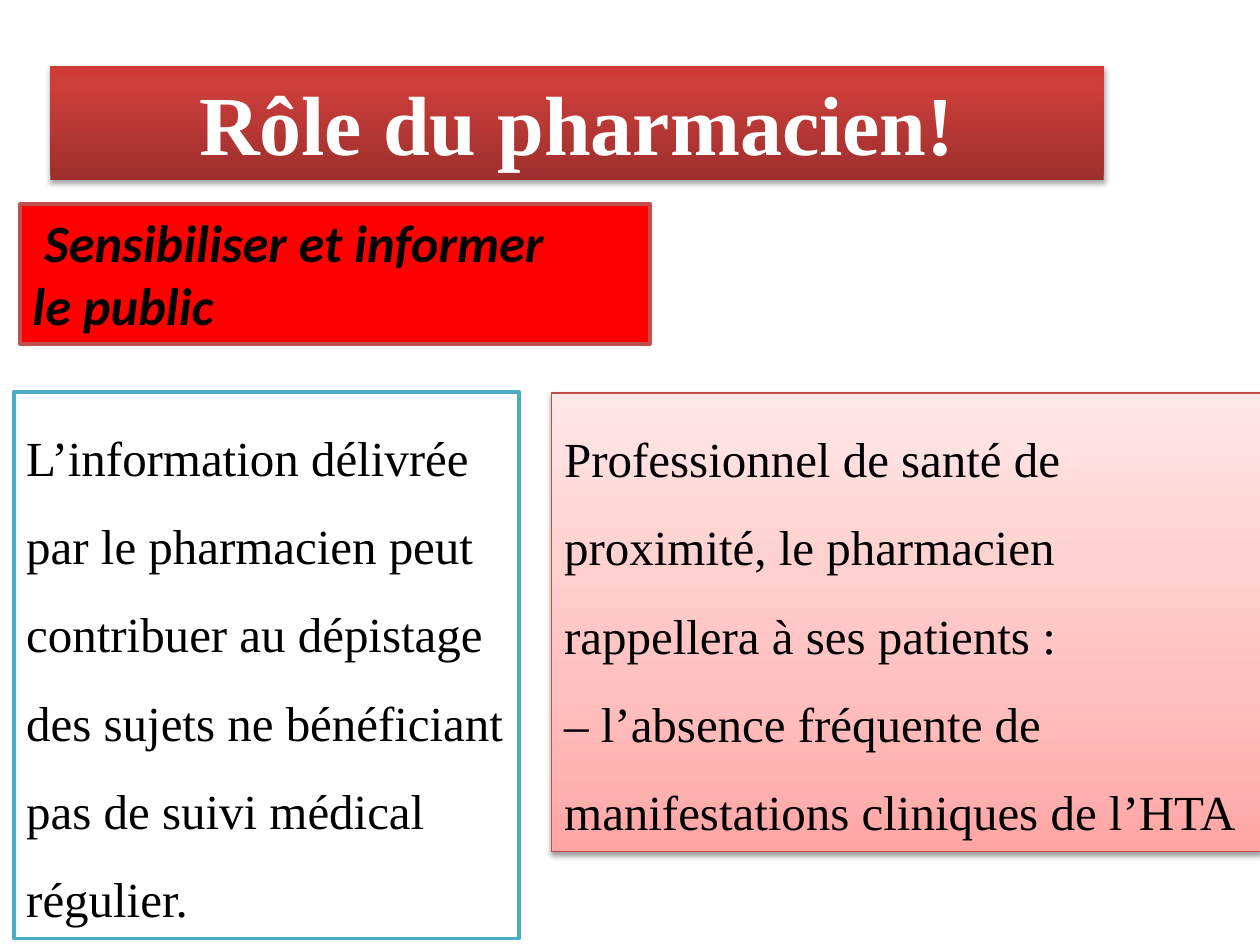
from lxml import etree
from pptx import Presentation
from pptx.dml.color import RGBColor
from pptx.enum.shapes import MSO_SHAPE
from pptx.enum.text import MSO_ANCHOR, MSO_AUTO_SIZE, PP_ALIGN
from pptx.oxml.ns import qn
from pptx.util import Inches, Pt

RECTANGLE = MSO_SHAPE.RECTANGLE
TOP = MSO_ANCHOR.TOP
GROW = MSO_AUTO_SIZE.SHAPE_TO_FIT_TEXT
LEFT, CENTER = PP_ALIGN.LEFT, PP_ALIGN.CENTER
SERIF, SANS = "Times New Roman", "Calibri"
COLORS = {
    "white": "FFFFFF",
    "black": "000000",
    "red": "FF0000",
    "brick": "C0504D",
    "rose": "BF4C48",
    "teal": "4BACC6",
}
TITLE_STOPS = [(0, "9C2F2D"), (80, "CB3E3A"), (100, "CE3B37")]
ADVICE_STOPS = [(0, "FFA6A5"), (35, "FFC0BF"), (100, "FFE7E7")]


def rgb(name):
    return RGBColor.from_string(COLORS[name])


def add_panel(slide, box, fill=None, line=None, width=0):
    panel = slide.shapes.add_shape(RECTANGLE, *(Inches(length) for length in box))
    panel.shadow.inherit = False
    if fill:
        panel.fill.solid()
        panel.fill.fore_color.rgb = rgb(fill)
    if line:
        panel.line.color.rgb = rgb(line)
        panel.line.width = Pt(width)
    else:
        panel.line.fill.background()
    frame = panel.text_frame
    frame.word_wrap = True
    frame.auto_size = GROW
    frame.vertical_anchor = TOP
    return panel


def add_color(parent, value):
    return etree.SubElement(parent, qn("a:srgbClr"), val=value)


def shade(panel, stops):
    panel.fill.gradient()
    panel.fill.gradient_angle = 90
    stop_list = panel.element.spPr.find(".//" + qn("a:gsLst"))
    for old in list(stop_list):
        stop_list.remove(old)
    for position, value in stops:
        stop = etree.SubElement(stop_list, qn("a:gs"), pos=str(position * 1000))
        add_color(stop, value)


def cast_shadow(panel, opacity, distance):
    effects = panel.element.spPr.find(qn("a:effectLst"))
    shadow = etree.SubElement(
        effects, qn("a:outerShdw"), blurRad=str(Pt(3.1)), dist=str(Pt(distance)),
        dir="5400000", rotWithShape="0")
    color = add_color(shadow, COLORS["black"])
    etree.SubElement(color, qn("a:alpha"), val=str(opacity * 1000))


def write(panel, paragraphs, font, size, color="black", bold=None, italic=None,
          align=LEFT, spacing=None):
    frame = panel.text_frame
    for index, runs in enumerate(paragraphs):
        paragraph = frame.add_paragraph() if index else frame.paragraphs[0]
        paragraph.alignment = align
        if spacing:
            paragraph.line_spacing = spacing
        for text in runs:
            run = paragraph.add_run()
            run.text = text
            run.font.name = font
            run.font.size = Pt(size)
            run.font.color.rgb = rgb(color)
            run.font.bold = bold
            run.font.italic = italic


def add_title(slide, box):
    title = add_panel(slide, box)
    shade(title, TITLE_STOPS)
    cast_shadow(title, 35, 1.8)
    write(title, [["Rôle du pharmacien!"]], SERIF, 48, "white", bold=True, align=CENTER)


def add_mission(slide, box):
    mission = add_panel(slide, box, "red", "brick", 2)
    write(mission, [[" ", "Sensibiliser et informer"], ["le public"]],
          SANS, 30, bold=True, italic=True)


def add_information(slide, box):
    information = add_panel(slide, box, "white", "teal", 2)
    write(information, [[
        "L’information délivrée par le pharmacien peut contribuer au dépistage "
        "des sujets ne bénéficiant pas de suivi médical régulier."
    ]], SERIF, 28, spacing=1.5)


def add_advice(slide, box):
    advice = add_panel(slide, box, line="rose", width=0.75)
    shade(advice, ADVICE_STOPS)
    cast_shadow(advice, 38, 1.6)
    write(advice, [
        ["Professionnel de santé de"],
        ["proximité, le pharmacien rappellera à ses patients :"],
        ["– l’absence fréquente de manifestations cliniques de l’HTA"],
    ], SERIF, 28, spacing=1.5)


def main():
    deck = Presentation()
    deck.slide_width, deck.slide_height = Inches(10), Inches(7.5)
    slide = deck.slides.add_slide(deck.slide_layouts[6])
    add_title(slide, (0.4, 0.52, 8.36, 0.91))
    add_mission(slide, (0.16, 1.62, 5, 1.11))
    add_information(slide, (0.11, 3.11, 4.01, 4.34))
    add_advice(slide, (4.38, 3.12, 5.63, 3.64))
    deck.save("out.pptx")


if __name__ == "__main__":
    main()
